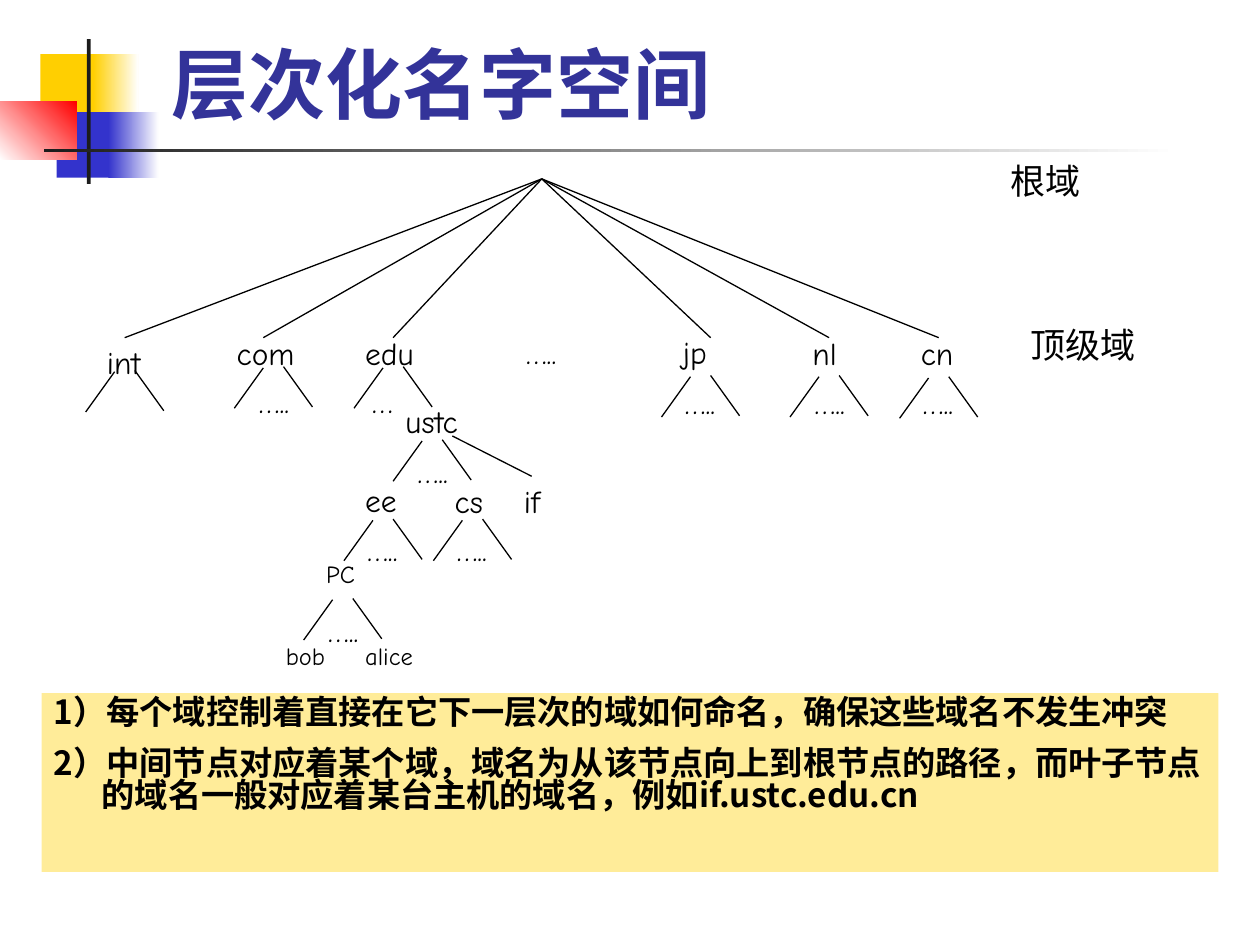
import pptx
import pptx.dml.color
import pptx.enum.shapes
import pptx.enum.text
import pptx.oxml.ns
import pptx.util
from lxml import etree

PX = 9144  # EMU in one px, 100 px to the inch
THEME = {
    "yellow": "FFCF01", "blue": "3333CC", "red": "FF0000", "dark": "1C1C1C",
    "white": "FFFFFF", "title": "333399", "note": "FFEC99", "ink": "000000",
    "cjk": "Noto Sans CJK SC", "latin": "Comic Neue",
    "title_pt": 44, "note_pt": 19, "level_pt": 20, "node_pt": 18, "leaf_pt": 14,
    "line_pt": 0.75,
}
rgb = pptx.dml.color.RGBColor.from_string
qn = pptx.oxml.ns.qn

deck = pptx.Presentation()
deck.slide_width, deck.slide_height = 1000 * PX, 750 * PX
slide = deck.slides.add_slide(deck.slide_layouts[6])


def add_text(lines, left, top, width, height, size, font="latin", color="ink", bold=False):
    box = slide.shapes.add_textbox(left * PX, top * PX, width * PX, height * PX)
    frame = box.text_frame
    frame.word_wrap = True
    frame.text = lines
    for paragraph in frame.paragraphs:
        for run in paragraph.runs:
            run.font.size = pptx.util.Pt(THEME[size])
            run.font.bold = bold
            run.font.color.rgb = rgb(THEME[color])
            run.font.name = THEME[font]
            east_asian = etree.SubElement(run.font._element, qn("a:ea"))
            east_asian.set("typeface", THEME[font])
    return box


def add_branch(x1, y1, x2, y2):
    branch = slide.shapes.add_connector(
        pptx.enum.shapes.MSO_CONNECTOR.STRAIGHT, x1 * PX, y1 * PX, x2 * PX, y2 * PX)
    branch.line.color.rgb = rgb(THEME["ink"])
    branch.line.width = pptx.util.Pt(THEME["line_pt"])
    etree.SubElement(branch._element.spPr, qn("a:effectLst"))


# Corner decoration: left, top, width, height, colours, gradient angle
for left, top, width, height, colors, angle in [
    (32, 43, 48, 52, ["yellow"], 0),
    (74, 43, 36, 52, ["yellow", "white"], 0),
    (45, 89, 46, 52, ["blue"], 0),
    (86, 89, 40, 52, ["blue", "white"], 0),
    (0, 81, 61, 46, ["white", "red"], 45),
    (69, 31, 3, 115, ["dark"], 0),
    (35, 118, 900, 3, ["dark", "white"], 0),
]:
    block = slide.shapes.add_shape(
        pptx.enum.shapes.MSO_SHAPE.RECTANGLE, left * PX, top * PX, width * PX, height * PX)
    block.shadow.inherit = False
    block.line.fill.background()
    if len(colors) == 1:
        block.fill.solid()
        block.fill.fore_color.rgb = rgb(THEME[colors[0]])
    else:
        block.fill.gradient()
        block.fill.gradient_angle = angle
        for stop, color in zip(block.fill.gradient_stops, colors):
            stop.color.rgb = rgb(THEME[color])

# Title
title = add_text("层次化名字空间", 126, 23, 852, 84, "title_pt", "cjk", "title", True)
title.text_frame.vertical_anchor = pptx.enum.text.MSO_ANCHOR.BOTTOM

# Notes under the tree
notes = add_text(
    "1）每个域控制着直接在它下一层次的域如何命名，确保这些域名不发生冲突\n"
    "2）中间节点对应着某个域，域名为从该节点向上到根节点的路径，"
    "而叶子节点的域名一般对应着某台主机的域名，例如if.ustc.edu.cn",
    33, 550, 934, 142, "note_pt", "cjk", bold=True)
notes.fill.solid()
notes.fill.fore_color.rgb = rgb(THEME["note"])
for paragraph in notes.text_frame.paragraphs:
    paragraph.line_spacing = 0.8
    properties = paragraph._p.get_or_add_pPr()
    properties.set("marL", str(38 * PX))
    properties.set("indent", str(-38 * PX))
notes.text_frame.paragraphs[1].space_before = pptx.util.Pt(11)

# Branches from the root to the top-level domains
for x in (99, 209, 312, 564, 658, 745):
    add_branch(430, 142, x, 268)
add_branch(359, 346, 422, 378)  # third child of ustc

# Domain names: text, left, top, width, height, size
for name, left, top, width, height, size in [
    ("int", 75, 267, 55, 40, "node_pt"),
    ("com", 178, 260, 87, 40, "node_pt"),
    ("edu", 280, 260, 87, 40, "node_pt"),
    ("jp", 532, 259, 87, 40, "node_pt"),
    ("nl", 635, 260, 87, 40, "node_pt"),
    ("cn", 721, 260, 87, 40, "node_pt"),
    ("ustc", 312, 314, 87, 40, "node_pt"),
    ("ee", 280, 377, 87, 40, "node_pt"),
    ("cs", 351, 378, 87, 40, "node_pt"),
    ("if", 406, 378, 87, 40, "node_pt"),
    ("PC", 249, 439, 55, 33, "leaf_pt"),
    ("bob", 217, 504, 55, 33, "leaf_pt"),
    ("alice", 280, 504, 71, 33, "leaf_pt"),
    ("根域", 792, 122, 102, 43, "level_pt"),
    ("顶级域", 808, 252, 134, 43, "level_pt"),
]:
    add_text(name, left, top, width, height, size)

# Pair of branches below each inner domain
for x, y in [(91, 294), (209, 291), (304, 291), (548, 298), (650, 298), (737, 299),
             (335, 349), (296, 412), (367, 412), (264, 475)]:
    add_branch(x, y + 1, x - 23, y + 33)
    add_branch(x + 16, y, x + 39, y + 32)

# Dots for the domains left out
for dots, left, top in [
    ("…..", 343, 259), ("…..", 131, 298), ("…", 217, 298), ("…..", 469, 299),
    ("…..", 572, 299), ("…..", 658, 299), ("…..", 257, 354), ("…..", 217, 416),
    ("…..", 288, 416), ("…..", 186, 480),
]:
    omitted = add_text(dots, left, top, 173, 40, "node_pt")
    omitted.text_frame.paragraphs[0].alignment = pptx.enum.text.PP_ALIGN.CENTER

deck.save("out.pptx")
